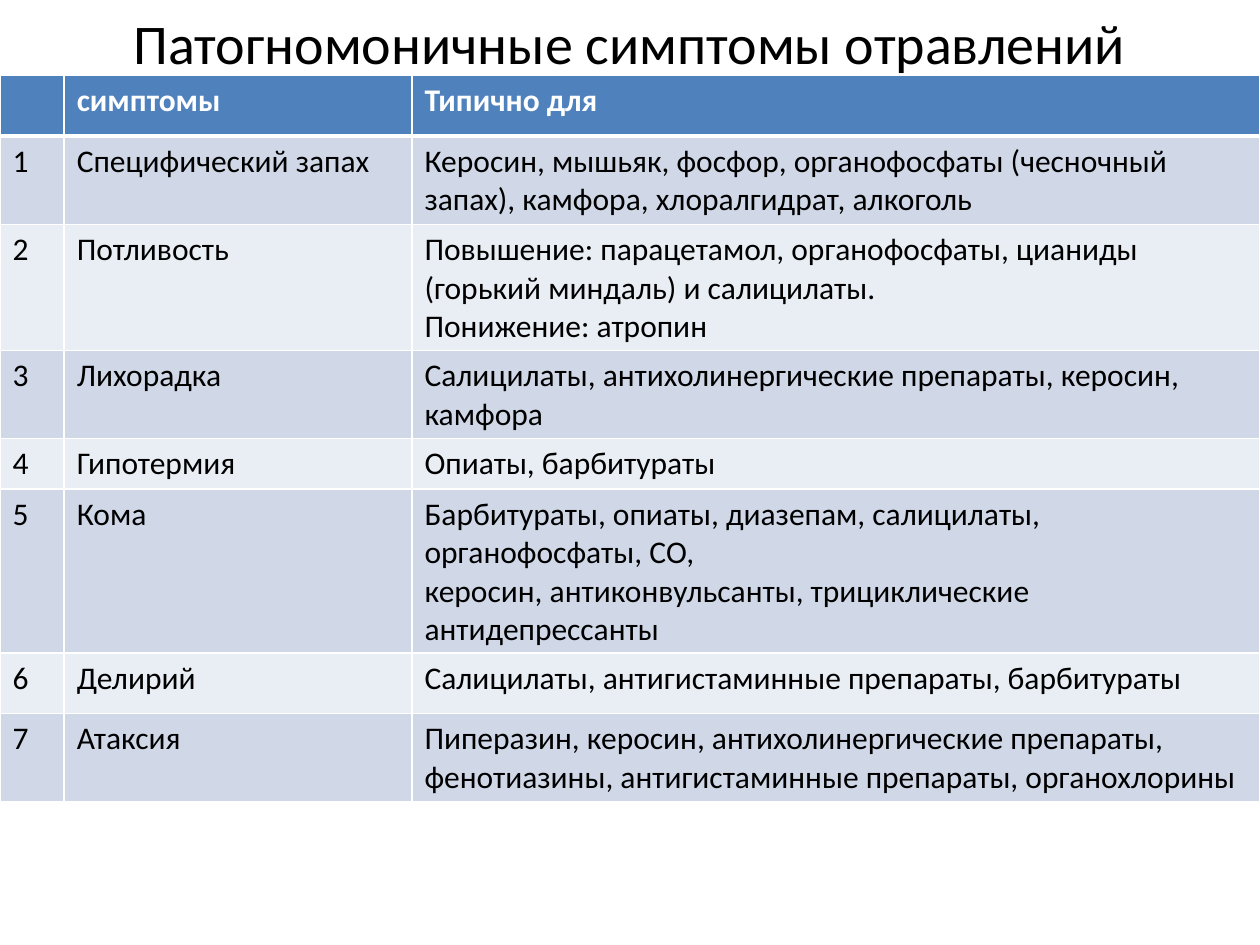
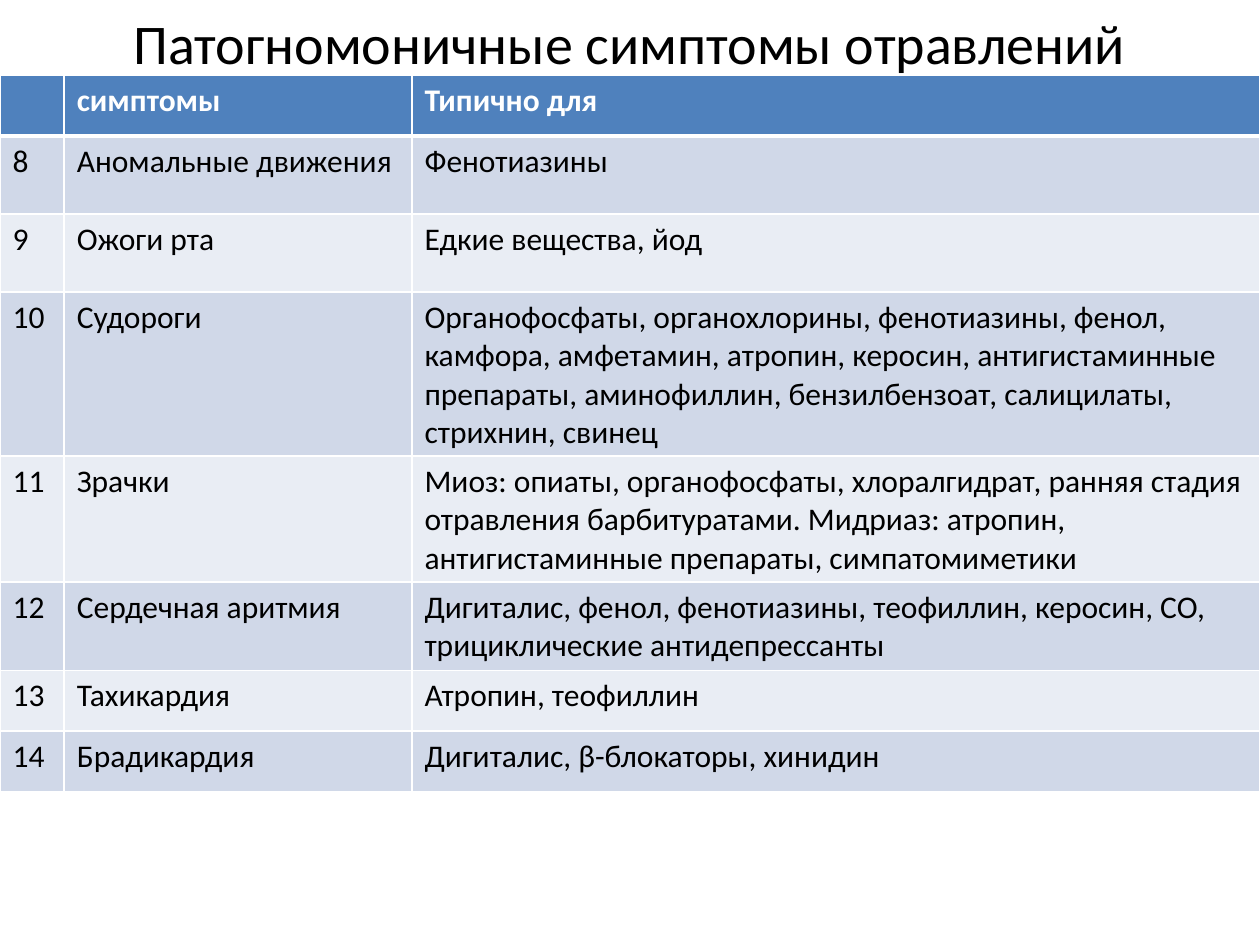
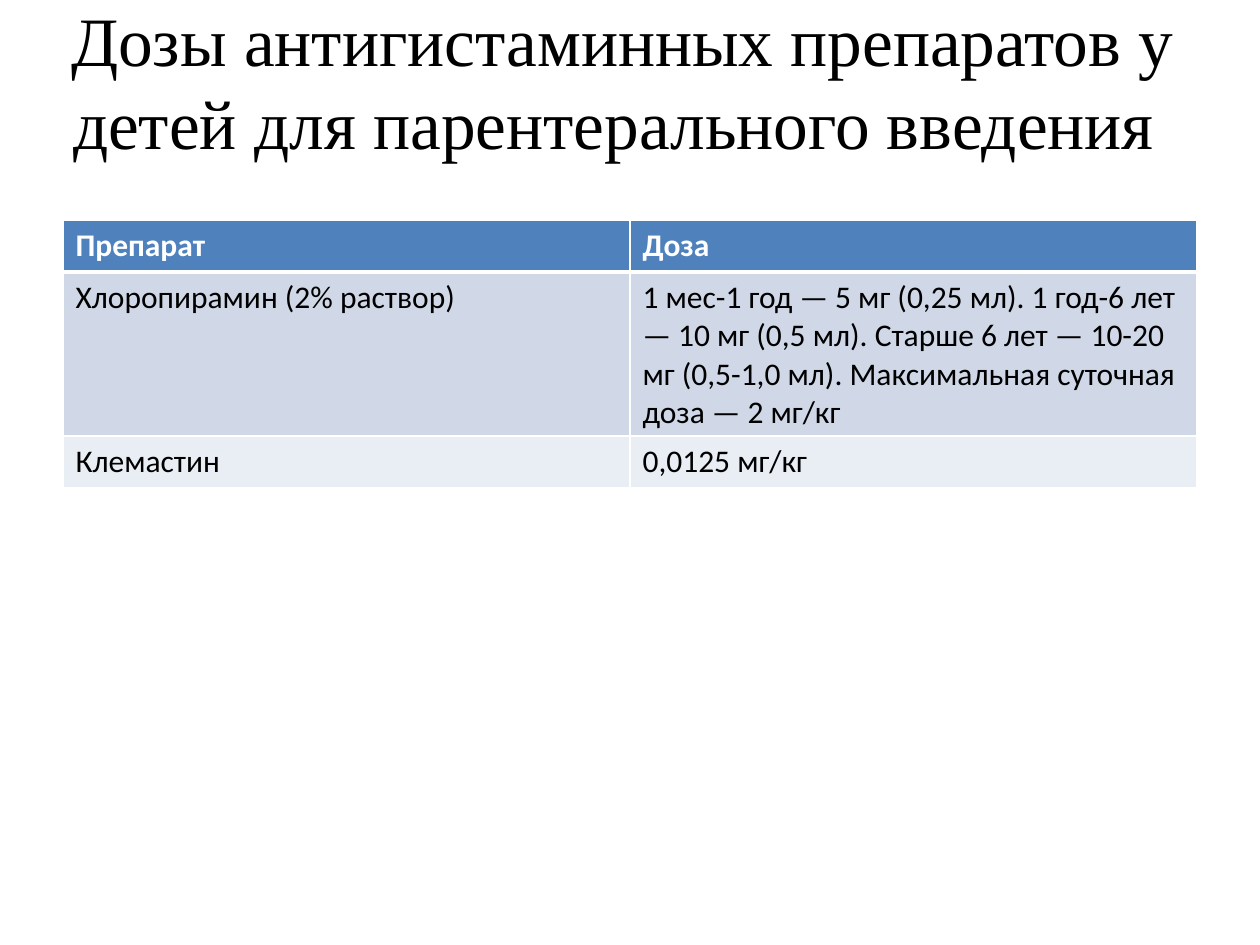
from collections import namedtuple

from pptx import Presentation
from pptx.dml.color import RGBColor
from pptx.enum.text import MSO_ANCHOR as Anchor, PP_ALIGN as Align
from pptx.oxml import parse_xml
from pptx.oxml.ns import nsdecls
from pptx.util import Inches, Pt

Box = namedtuple("Box", "left top width height")

WIDTH, HEIGHT = 10, 7.5
BODY_FONT = "Calibri"
BLACK, WHITE = "000000", "FFFFFF"
HEADER_FILL = "4F81BD"
BAND_FILLS = ("D0D8E8", "E9EDF4")
THIN, THICK = 1, 3

SYMPTOM_TITLE = "Патогномоничные симптомы отравлений"
SYMPTOM_HEADER = ("", "симптомы", "Типично для")
SYMPTOM_COLUMNS = (0.51, 2.76, 6.73)
FIRST_SYMPTOMS = [
    ("Специфический запах",
     "Керосин, мышьяк, фосфор, органофосфаты (чесночный запах), камфора, хлоралгидрат, алкоголь"),
    ("Потливость",
     "Повышение: парацетамол, органофосфаты, цианиды (горький миндаль) и салицилаты.\n"
     "Понижение: атропин"),
    ("Лихорадка", "Салицилаты, антихолинергические препараты, керосин, камфора"),
    ("Гипотермия", "Опиаты, барбитураты"),
    ("Кома",
     "Барбитураты, опиаты, диазепам, салицилаты, органофосфаты, СО,\n"
     "керосин, антиконвульсанты, трициклические антидепрессанты"),
    ("Делирий", "Салицилаты, антигистаминные препараты, барбитураты"),
    ("Атаксия",
     "Пиперазин, керосин, антихолинергические препараты, фенотиазины, "
     "антигистаминные препараты, органохлорины"),
]
FIRST_HEIGHTS = (0.48, 0.62, 0.94, 0.65, 0.35, 1.29, 0.48, 0.48)
SECOND_SYMPTOMS = [
    ("Аномальные движения", "Фенотиазины"),
    ("Ожоги рта", "Едкие вещества, йод"),
    ("Судороги",
     "Органофосфаты, органохлорины, фенотиазины, фенол, камфора, амфетамин, атропин, керосин, "
     "антигистаминные препараты, аминофиллин, бензилбензоат, салицилаты, стрихнин, свинец"),
    ("Зрачки",
     "Миоз: опиаты, органофосфаты, хлоралгидрат, ранняя стадия отравления барбитуратами. "
     "Мидриаз: атропин, антигистаминные препараты, симпатомиметики"),
    ("Сердечная аритмия",
     "Дигиталис, фенол, фенотиазины, теофиллин, керосин, СО, трициклические антидепрессанты"),
    ("Тахикардия", "Атропин, теофиллин"),
    ("Брадикардия", "Дигиталис, β-блокаторы, хинидин"),
]
SECOND_HEIGHTS = (0.48, 0.62, 0.62, 0.62, 0.94, 0.65, 0.48, 0.48)
DOSE_TITLE = "Дозы антигистаминных препаратов у детей для парентерального введения "
DOSES = [
    ("Препарат", "Доза"),
    ("Хлоропирамин (2% раствор)",
     "1 мес-1 год — 5 мг (0,25 мл). 1 год-6 лет — 10 мг (0,5 мл). "
     "Старше 6 лет — 10-20 мг (0,5-1,0 мл). Максимальная суточная доза — 2 мг/кг"),
    ("Клемастин", "0,0125 мг/кг"),
]


def color(code):
    """Turn a hex string into a colour."""
    return RGBColor.from_string(code)


def style_text(frame, size, font, code, bold=False):
    """Format every run of a text frame."""
    for para in frame.paragraphs:
        for span in para.runs:
            span.font.size = Pt(size)
            span.font.name = font
            span.font.bold = bold
            span.font.color.rgb = color(code)


def add_title(page, box, text, size, font=BODY_FONT):
    """Place a centred title in its box."""
    frame = page.shapes.add_textbox(*map(Inches, box)).text_frame
    frame.word_wrap = True
    frame.vertical_anchor = Anchor.MIDDLE
    frame.text = text
    frame.paragraphs[0].alignment = Align.CENTER
    style_text(frame, size, font, BLACK)


def add_borders(cell, top, bottom):
    """Draw the white borders of a cell, with its top and bottom widths in points."""
    properties = cell._tc.get_or_add_tcPr()
    for side, width in (("L", THIN), ("R", THIN), ("T", top), ("B", bottom)):
        properties.append(parse_xml(
            f'<a:ln{side} {nsdecls("a")} w="{Pt(width)}"><a:solidFill>'
            f'<a:srgbClr val="{WHITE}"/></a:solidFill></a:ln{side}>'))


def fill_cell(cell, text, row):
    """Write and colour one cell according to its row number."""
    header = row == 0
    add_borders(cell, THICK if row == 1 else THIN, THICK if header else THIN)
    cell.fill.solid()
    cell.fill.fore_color.rgb = color(HEADER_FILL if header else BAND_FILLS[(row - 1) % 2])
    cell.text_frame.text = text
    style_text(cell.text_frame, 18, BODY_FONT, WHITE if header else BLACK, header)


def add_grid(page, box, rows, columns, heights):
    """Place a banded table whose columns share the width of its box."""
    table = page.shapes.add_table(len(rows), len(columns), *map(Inches, box)).table
    table.horz_banding = False
    for column, share in zip(table.columns, columns):
        column.width = Inches(box.width * share / sum(columns))
    for number, (texts, height) in enumerate(zip(rows, heights)):
        table.rows[number].height = Inches(height)
        for place, text in enumerate(texts):
            fill_cell(table.cell(number, place), text, number)


def add_symptom_page(page, symptoms, first_number, heights):
    """Build a slide with a numbered symptom table across its full width."""
    add_title(page, Box(0, 0, WIDTH, HEIGHT * 0.09), SYMPTOM_TITLE, 32)
    rows = [SYMPTOM_HEADER]
    rows += [(str(number), *texts) for number, texts in enumerate(symptoms, first_number)]
    box = Box(0, HEIGHT * 0.08, WIDTH, sum(heights))
    add_grid(page, box, rows, SYMPTOM_COLUMNS, heights)


def add_dose_page(page):
    """Build the slide with the dose table."""
    add_title(page, Box(0, 0.13, 9.88, 1.02), DOSE_TITLE, 39.6, "Times New Roman")
    heights = [0.41] * len(DOSES)
    box = Box(WIDTH * 0.05, 1.75, WIDTH * 0.9, sum(heights))
    add_grid(page, box, DOSES, (1, 1), heights)


def main():
    """Build and save the deck."""
    deck = Presentation()
    deck.slide_width, deck.slide_height = Inches(WIDTH), Inches(HEIGHT)
    blank = deck.slide_layouts[6]
    first, second, third = (deck.slides.add_slide(blank) for _ in range(3))
    add_symptom_page(first, FIRST_SYMPTOMS, 1, FIRST_HEIGHTS)
    add_symptom_page(second, SECOND_SYMPTOMS, len(FIRST_SYMPTOMS) + 1, SECOND_HEIGHTS)
    add_dose_page(third)
    deck.save("out.pptx")


if __name__ == "__main__":
    main()
